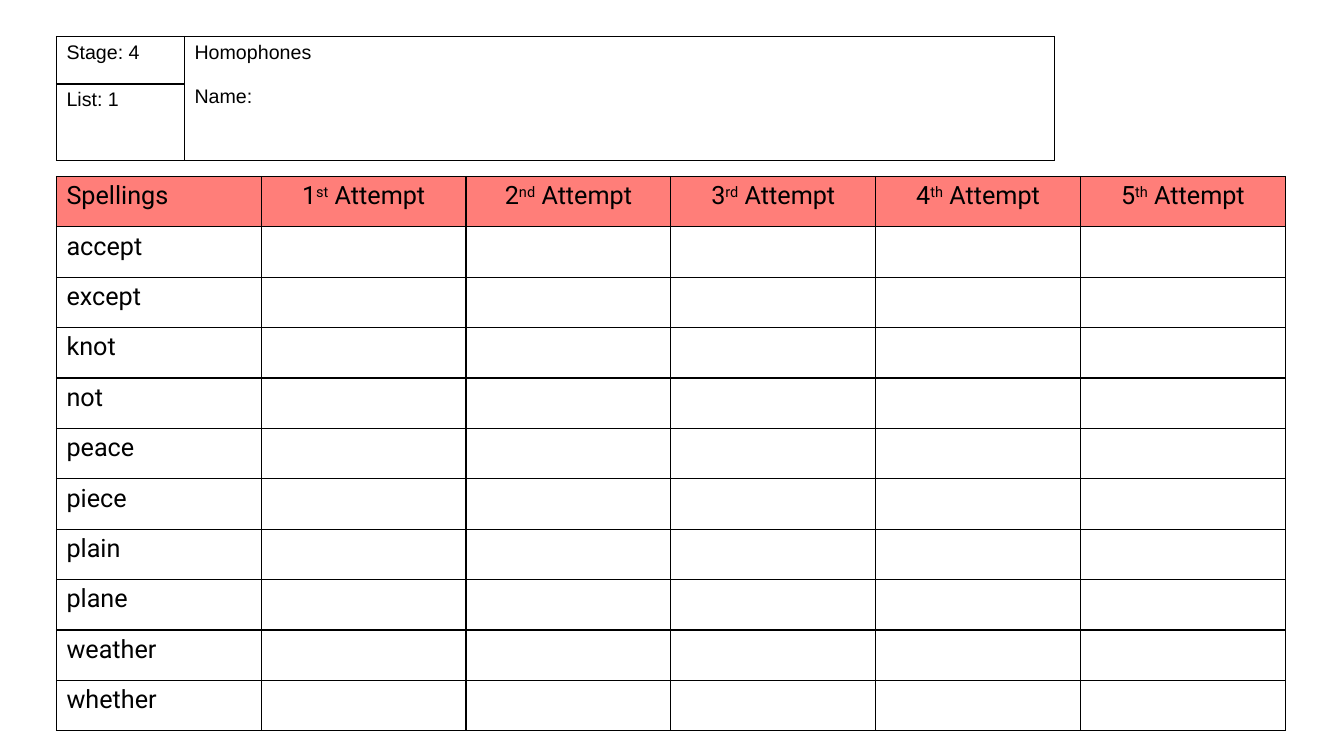
from lxml.etree import SubElement
from pptx import Presentation
from pptx.dml.color import RGBColor
from pptx.enum.text import PP_ALIGN as Align
from pptx.oxml.ns import qn
from pptx.util import Pt

BLACK = RGBColor(0x00, 0x00, 0x00)
CORAL = RGBColor(0xFF, 0x7E, 0x79)

WORDS = ["accept", "except", "knot", "not", "peace",
         "piece", "plain", "plane", "weather", "whether"]
ORDINALS = ["st", "nd", "rd", "th", "th"]


def write(p, text, font="Roboto", size=18, color=BLACK, raised=False):
    """Add a run of text to a paragraph."""
    r = p.add_run()
    r.text = text
    r.font.name = font
    r.font.size = Pt(size)
    r.font.color.rgb = color
    if raised:
        r._r.get_or_add_rPr().set("baseline", "30000")


class Sheet:
    """Current slide and its grid style."""

    def __init__(self, slide, line_color=BLACK, line_width=1):
        self.slide = slide
        self.line_color = line_color
        self.line_width = line_width

    def table(self, left, top, col_widths, row_heights):
        frame = self.slide.shapes.add_table(
            len(row_heights), len(col_widths), Pt(left), Pt(top),
            Pt(sum(col_widths)), Pt(sum(row_heights)))
        table = frame.table
        table.first_row = table.horz_banding = False
        for column, width in zip(table.columns, col_widths):
            column.width = Pt(width)
        for row, height in zip(table.rows, row_heights):
            row.height = Pt(height)
        for cell in table.iter_cells():
            self.border(cell)
            cell.fill.background()
        return table

    def border(self, cell):
        props = cell._tc.get_or_add_tcPr()
        for side in ("a:lnL", "a:lnR", "a:lnT", "a:lnB"):
            ln = SubElement(props, qn(side), w=str(Pt(self.line_width)))
            fill = SubElement(ln, qn("a:solidFill"))
            SubElement(fill, qn("a:srgbClr"), val=str(self.line_color))


def main():
    prs = Presentation()
    prs.slide_width, prs.slide_height = Pt(960), Pt(540)
    sheet = Sheet(prs.slides.add_slide(prs.slide_layouts[6]))

    # Spelling grid
    grid = sheet.table(40.3, 126, [146.3] * 6, [36] * (len(WORDS) + 1))
    for row, word in enumerate(["Spellings"] + WORDS):
        write(grid.cell(row, 0).text_frame.paragraphs[0], word)
    for number, suffix in enumerate(ORDINALS, start=1):
        p = grid.cell(0, number).text_frame.paragraphs[0]
        p.alignment = Align.CENTER
        write(p, str(number))
        write(p, suffix, raised=True)
        write(p, " Attempt")
    for cell in grid.rows[0].cells:
        cell.fill.solid()
        cell.fill.fore_color.rgb = CORAL

    # List details
    details = sheet.table(40.3, 26, [91.5, 621.5], [34, 34])
    details.cell(0, 1).merge(details.cell(1, 1))
    label = {"font": "Arial", "size": 14}
    for row, text in enumerate(["Stage: 4", "List: 1"]):
        write(details.cell(row, 0).text_frame.paragraphs[0], text, **label)
    tf = details.cell(0, 1).text_frame
    write(tf.paragraphs[0], "Homophones", **label)
    p = tf.add_paragraph()
    p.space_before = Pt(16)
    write(p, "Name:", **label)

    prs.save("out.pptx")


if __name__ == "__main__":
    main()
